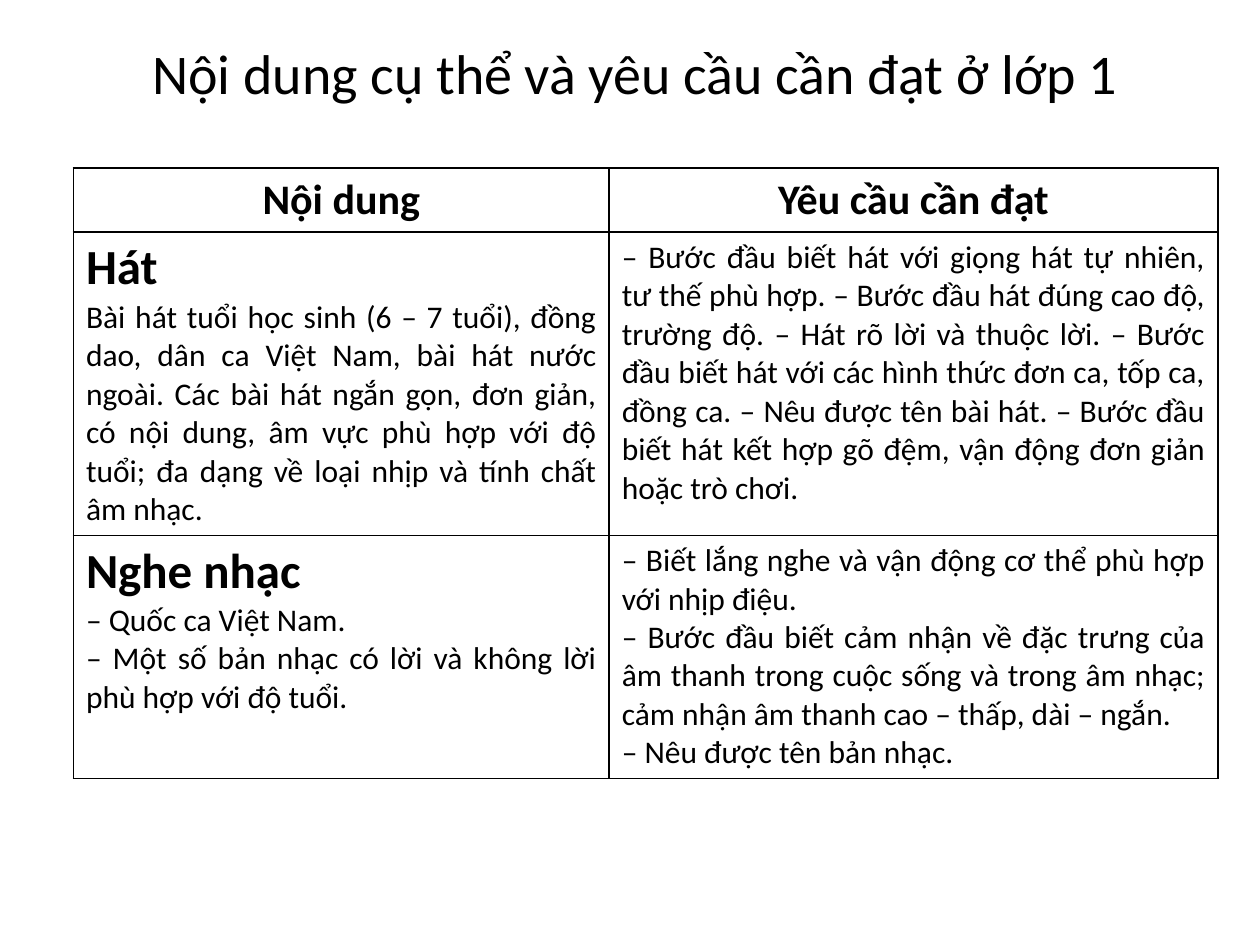
from dataclasses import dataclass

from lxml import etree
from pptx import Presentation
from pptx import util as u
from pptx.dml.color import RGBColor
from pptx.enum import text
from pptx.oxml import ns

COLORS = {"ink": "000000", "paper": "FFFFFF"}
FONT = "Calibri"
BORDER_WIDTH = u.Pt(1)
COLUMN_WIDTHS = (u.Cm(10.8), u.Cm(12.27))
ROW_HEIGHTS = (u.Cm(1.27), u.Cm(6), u.Cm(4.83))


@dataclass(frozen=True)
class Style:
    size: int
    bold: bool
    align: text.PP_ALIGN


@dataclass(frozen=True)
class Line:
    words: str
    style: Style


TITLE = Style(32, False, text.PP_ALIGN.CENTER)
HEADER = Style(24, True, text.PP_ALIGN.CENTER)
TOPIC = Style(28, True, text.PP_ALIGN.JUSTIFY)
BODY = Style(18, False, text.PP_ALIGN.JUSTIFY)

ROWS = (
    ((Line("Nội dung", HEADER),), (Line("Yêu cầu cần đạt", HEADER),)),
    (
        (
            Line("Hát", TOPIC),
            Line("Bài hát tuổi học sinh (6 – 7 tuổi), đồng dao, dân ca Việt Nam, "
                 "bài hát nước ngoài. Các bài hát ngắn gọn, đơn giản, có nội dung, "
                 "âm vực phù hợp với độ tuổi; đa dạng về loại nhịp và tính chất "
                 "âm nhạc.", BODY),
        ),
        (
            Line("– Bước đầu biết hát với giọng hát tự nhiên, tư thế phù hợp. "
                 "– Bước đầu hát đúng cao độ, trường độ. – Hát rõ lời và thuộc lời. "
                 "– Bước đầu biết hát với các hình thức đơn ca, tốp ca, đồng ca. "
                 "– Nêu được tên bài hát. – Bước đầu biết hát kết hợp gõ đệm, "
                 "vận động đơn giản hoặc trò chơi.", BODY),
        ),
    ),
    (
        (
            Line("Nghe nhạc", TOPIC),
            Line("– Quốc ca Việt Nam.", BODY),
            Line("– Một số bản nhạc có lời và không lời phù hợp với độ tuổi.", BODY),
        ),
        (
            Line("– Biết lắng nghe và vận động cơ thể phù hợp với nhịp điệu.", BODY),
            Line("– Bước đầu biết cảm nhận về đặc trưng của âm thanh trong cuộc sống "
                 "và trong âm nhạc; cảm nhận âm thanh cao – thấp, dài – ngắn.", BODY),
            Line("– Nêu được tên bản nhạc.", BODY),
        ),
    ),
)


def write_lines(frame, lines: tuple[Line, ...]) -> None:
    """Write one styled paragraph per line into a text frame."""
    for index, line in enumerate(lines):
        para = frame.add_paragraph() if index else frame.paragraphs[0]
        para.text = line.words
        para.alignment = line.style.align
        para.font.name = FONT
        para.font.size = u.Pt(line.style.size)
        para.font.bold = line.style.bold
        para.font.color.rgb = RGBColor.from_string(COLORS["ink"])


def draw_borders(cell) -> None:
    """Rule all four sides of a table cell."""
    properties = cell._tc.get_or_add_tcPr()
    for side in ("lnL", "lnR", "lnT", "lnB"):
        border = etree.SubElement(properties, ns.qn(f"a:{side}"), w=str(BORDER_WIDTH))
        fill = etree.SubElement(border, ns.qn("a:solidFill"))
        etree.SubElement(fill, ns.qn("a:srgbClr"), val=COLORS["ink"])


def add_title(page, words: str) -> None:
    """Place and format the title placeholder."""
    title = page.shapes.title
    title.left, title.top = u.Cm(1.06), u.Cm(0.64)
    title.width, title.height = u.Cm(23.5), u.Cm(1.62)
    title.text_frame.vertical_anchor = text.MSO_ANCHOR.MIDDLE
    write_lines(title.text_frame, (Line(words, TITLE),))


def add_requirements(page) -> None:
    """Build the table of contents and requirements."""
    table = page.shapes.add_table(
        len(ROWS), len(COLUMN_WIDTHS), u.Cm(1.48), u.Cm(3.39),
        sum(COLUMN_WIDTHS), sum(ROW_HEIGHTS),
    ).table
    table.first_row = table.horz_banding = False
    for column, width in zip(table.columns, COLUMN_WIDTHS):
        column.width = width
    for row, height, contents in zip(table.rows, ROW_HEIGHTS, ROWS):
        row.height = height
        for cell, lines in zip(row.cells, contents):
            draw_borders(cell)
            cell.fill.solid()
            cell.fill.fore_color.rgb = RGBColor.from_string(COLORS["paper"])
            write_lines(cell.text_frame, lines)


def main() -> None:
    """Build and save the slide."""
    deck = Presentation()
    deck.slide_width, deck.slide_height = u.Cm(25.4), u.Cm(19.05)
    page = deck.slides.add_slide(deck.slide_layouts.get_by_name("Title Only"))
    add_title(page, "Nội dung cụ thể và yêu cầu cần đạt ở lớp 1")
    add_requirements(page)
    deck.save("out.pptx")


if __name__ == "__main__":
    main()
